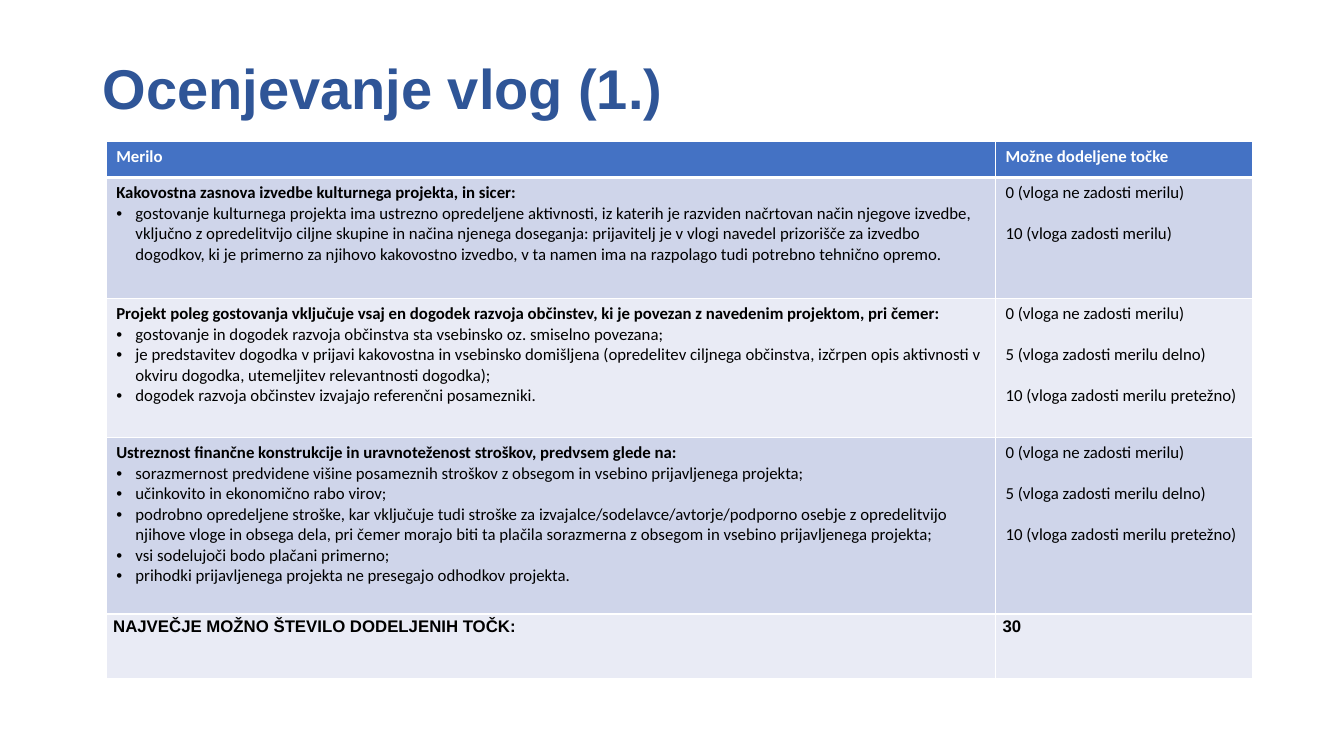
import pptx
import pptx.util
import pptx.dml.color
import pptx.enum.text
import pptx.oxml
import pptx.oxml.ns

COLORS = {"title": "2F5597", "header": "4472C4", "odd": "CFD5EA",
          "even": "E9EBF5", "white": "FFFFFF", "black": "000000"}
ALIGN = pptx.enum.text.PP_ALIGN
ANCHOR = pptx.enum.text.MSO_ANCHOR
LINE_GAP = 14.65
INDENT = 0.19

NO_MERIT = "0 (vloga ne zadosti merilu)"
GRADES = [NO_MERIT, "5 (vloga zadosti merilu delno)", "10 (vloga zadosti merilu pretežno)"]

# Each criterion: heading, bullets, possible points
CRITERIA = [
    ("Kakovostna zasnova izvedbe kulturnega projekta, in sicer:",
     ["gostovanje kulturnega projekta ima ustrezno opredeljene aktivnosti, iz katerih je razviden "
      "načrtovan način njegove izvedbe, vključno z opredelitvijo ciljne skupine in načina njenega "
      "doseganja: prijavitelj je v vlogi navedel prizorišče za izvedbo dogodkov, ki je primerno za "
      "njihovo kakovostno izvedbo, v ta namen ima na razpolago tudi potrebno tehnično opremo."],
     [NO_MERIT, "10 (vloga zadosti merilu)"]),
    ("Projekt poleg gostovanja vključuje vsaj en dogodek razvoja občinstev, ki je povezan z "
     "navedenim projektom, pri čemer:",
     ["gostovanje in dogodek razvoja občinstva sta vsebinsko oz. smiselno povezana;",
      "je predstavitev dogodka v prijavi kakovostna in vsebinsko domišljena (opredelitev ciljnega "
      "občinstva, izčrpen opis aktivnosti v okviru dogodka, utemeljitev relevantnosti dogodka);",
      "dogodek razvoja občinstev izvajajo referenčni posamezniki."],
     GRADES),
    ("Ustreznost finančne konstrukcije in uravnoteženost stroškov, predvsem glede na:",
     ["sorazmernost predvidene višine posameznih stroškov z obsegom in vsebino prijavljenega projekta;",
      "učinkovito in ekonomično rabo virov;",
      "podrobno opredeljene stroške, kar vključuje tudi stroške za "
      "izvajalce/sodelavce/avtorje/podporno osebje z opredelitvijo njihove vloge in obsega dela, "
      "pri čemer morajo biti ta plačila sorazmerna z obsegom in vsebino prijavljenega projekta;",
      "vsi sodelujoči bodo plačani primerno;",
      "prihodki prijavljenega projekta ne presegajo odhodkov projekta."],
     GRADES),
]


class Deck:
    """Places elements on one slide; lengths are percent of its width and height."""

    def __init__(self, width, height):
        self.prs = pptx.Presentation()
        self.prs.slide_width = pptx.util.Inches(width)
        self.prs.slide_height = pptx.util.Inches(height)
        self.s = self.prs.slides.add_slide(self.prs.slide_layouts[6])

    def x(self, share):
        return int(self.prs.slide_width * share / 100)

    def y(self, share):
        return int(self.prs.slide_height * share / 100)

    def box(self, left, top, width, height):
        return self.x(left), self.y(top), self.x(width), self.y(height)

    def fill_text(self, tf, paragraphs):
        """Fill a text frame from (text, font format, paragraph format, bulleted) tuples."""
        for i, (text, font, layout, bulleted) in enumerate(paragraphs):
            p = tf.add_paragraph() if i else tf.paragraphs[0]
            for name, value in layout.items():
                setattr(p, name, value)
            r = p.add_run()
            r.text = text
            style = {"name": "Calibri", "size": 12, "bold": False, "color": "black"} | font
            style["size"] = pptx.util.Pt(style["size"])
            r.font.color.rgb = pptx.dml.color.RGBColor.from_string(COLORS[style.pop("color")])
            for name, value in style.items():
                setattr(r.font, name, value)
            if bulleted:
                self.bullet(p)

    def bullet(self, p):
        pPr = p._p.get_or_add_pPr()
        pPr.set("marL", str(pptx.util.Inches(INDENT)))
        pPr.set("indent", str(-pptx.util.Inches(INDENT)))
        for tag, name, value in [("buFont", "typeface", "Arial"), ("buChar", "char", "•")]:
            pPr.append(pptx.oxml.parse_xml(
                f'<a:{tag} {pptx.oxml.ns.nsdecls("a")} {name}="{value}"/>'))

    def title(self, text, *place):
        tf = self.s.shapes.add_textbox(*self.box(*place)).text_frame
        for name, value in {"word_wrap": True, "vertical_anchor": ANCHOR.MIDDLE}.items():
            setattr(tf, name, value)
        font = {"name": "Arial", "size": 40, "bold": True, "color": "title"}
        self.fill_text(tf, [(text, font, {"line_spacing": 0.9}, False)])

    def borders(self, cell, widths):
        tcPr = cell._tc.get_or_add_tcPr()
        for side, width in widths.items():
            tcPr.append(pptx.oxml.parse_xml(
                f'<a:ln{side} {pptx.oxml.ns.nsdecls("a")} w="{pptx.util.Pt(width)}">'
                f'<a:solidFill><a:srgbClr val="{COLORS["white"]}"/></a:solidFill></a:ln{side}>'))

    def table(self, left, top, columns, heights, rows, fills, margins):
        """Rows hold one paragraph list per cell; margins maps a row index to its insets."""
        place = self.box(left, top, sum(columns), sum(heights))
        tb = self.s.shapes.add_table(len(heights), len(columns), *place).table
        for column, width in zip(tb.columns, columns):
            column.width = self.x(width)
        for i, (row, height) in enumerate(zip(tb.rows, heights)):
            row.height = self.y(height)
            for cell, paragraphs in zip(row.cells, rows[i]):
                for name, value in margins.get(i, {}).items():
                    setattr(cell, name, pptx.util.Inches(value))
                self.fill_text(cell.text_frame, paragraphs)
                self.borders(cell, {"L": 1, "R": 1, "T": 3 if i == 1 else 1, "B": 1 if i else 3})
                cell.fill.solid()
                cell.fill.fore_color.rgb = pptx.dml.color.RGBColor.from_string(COLORS[fills[i]])


def criterion_row(heading, bullets, points):
    left = [(heading, {"bold": True}, {}, False)] + [(text, {}, {}, True) for text in bullets]
    right = [(text, {}, {"space_before": pptx.util.Pt(LINE_GAP if i else 0)}, False)
             for i, text in enumerate(points)]
    return [left, right]


def plain_row(texts, font, layout):
    return [[(text, {"bold": True} | font, layout, False)] for text in texts]


def main():
    deck = Deck(13.33, 7.5)
    deck.title("Ocenjevanje vlog (1.)", 6.9, 5.33, 86.27, 13.47)
    total_layout = {"alignment": ALIGN.JUSTIFY, "line_spacing": 1.15,
                    "space_after": pptx.util.Pt(10)}
    rows = [plain_row(["Merilo", "Možne dodeljene točke"], {"color": "white"}, {}),
            *(criterion_row(*criterion) for criterion in CRITERIA),
            plain_row(["NAJVEČJE MOŽNO ŠTEVILO DODELJENIH TOČK:", "30"],
                      {"name": "Arial"}, total_layout)]
    total_margins = {"margin_left": 0.07, "margin_right": 0.07,
                     "margin_top": 0, "margin_bottom": 0}
    deck.table(7.9, 18.7, [66.17, 19.13], [4.8, 16, 18.4, 23.33, 8.53], rows,
               ["header", "odd", "even", "odd", "even"], {4: total_margins})
    deck.prs.save("out.pptx")


if __name__ == "__main__":
    main()
